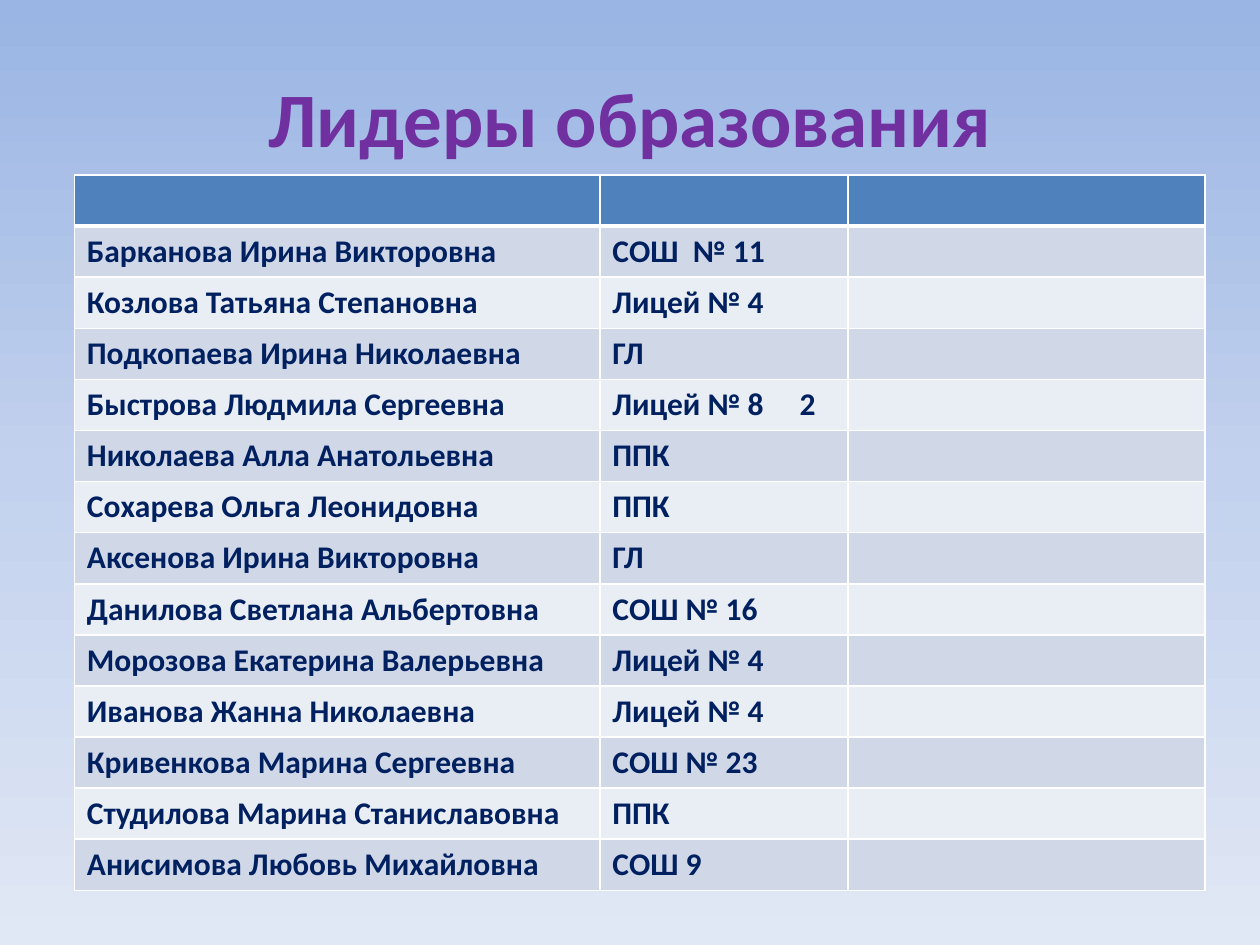
from dataclasses import dataclass
import copy

import lxml.etree
import pptx
import pptx.dml.color
import pptx.enum.text
import pptx.oxml.ns
import pptx.util

Pt = pptx.util.Pt
qn = pptx.oxml.ns.qn


@dataclass(frozen=True)
class Theme:
    font: str = "Calibri"
    title_size: int = 44
    body_size: int = 18
    title: str = "7030A0"
    body: str = "002060"
    header: str = "4F81BD"
    bands: tuple = ("D0D8E8", "E9EDF4")
    border: str = "FFFFFF"
    thin: int = 1
    thick: int = 3
    background: tuple = ("9AB5E4", "C2D1ED", "E1E8F5")


LEADERS = [
    ("Барканова Ирина Викторовна", "СОШ  № 11"),
    ("Козлова Татьяна Степановна", "Лицей № 4"),
    ("Подкопаева Ирина Николаевна", "ГЛ"),
    ("Быстрова Людмила Сергеевна", "Лицей № 8\t2"),
    ("Николаева Алла Анатольевна", "ППК"),
    ("Сохарева Ольга Леонидовна", "ППК"),
    ("Аксенова Ирина Викторовна", "ГЛ"),
    ("Данилова Светлана Альбертовна", "СОШ № 16"),
    ("Морозова Екатерина Валерьевна", "Лицей № 4"),
    ("Иванова Жанна Николаевна", "Лицей № 4"),
    ("Кривенкова Марина Сергеевна", "СОШ № 23"),
    ("Студилова Марина Станиславовна", "ППК"),
    ("Анисимова Любовь Михайловна", "СОШ 9"),
]


def rgb(color):
    return pptx.dml.color.RGBColor.from_string(color)


def write(tf, text, *, font, size, color, bold=True, align=None, tab=None):
    p = tf.paragraphs[0]
    p.alignment = align
    if tab:
        tabs = lxml.etree.SubElement(p._p.get_or_add_pPr(), qn("a:tabLst"))
        lxml.etree.SubElement(tabs, qn("a:tab"), pos=str(Pt(tab)), algn="l")
    r = p.add_run()
    r.text = text
    r.font.name, r.font.size, r.font.bold = font, Pt(size), bold
    r.font.color.rgb = rgb(color)


class SlideBuilder:
    def __init__(self, prs, theme):
        self.theme = theme
        self.s = prs.slides.add_slide(prs.slide_layouts[5])

    def background(self):
        fill = self.s.background.fill
        fill.gradient()
        fill.gradient_angle = 270
        stops = self.s.element.find(".//" + qn("a:gsLst"))
        stops.append(copy.deepcopy(stops[-1]))
        colors = self.theme.background
        for i, (stop, color) in enumerate(zip(fill.gradient_stops, colors)):
            stop.position = i / (len(colors) - 1)
            stop.color.rgb = rgb(color)

    def title(self, text, left, top, width, height):
        sp = self.s.shapes.title
        sp.left, sp.top, sp.width, sp.height = map(Pt, (left, top, width, height))
        tf = sp.text_frame
        tf.vertical_anchor = pptx.enum.text.MSO_ANCHOR.MIDDLE
        write(tf, text, font=self.theme.font, size=self.theme.title_size,
              color=self.theme.title, align=pptx.enum.text.PP_ALIGN.CENTER)

    def borders(self, cell, **widths):
        for side in "LRTB":
            width = widths.get(side, self.theme.thin)
            ln = lxml.etree.SubElement(cell._tc.get_or_add_tcPr(),
                                       qn("a:ln" + side), w=str(Pt(width)))
            fill = lxml.etree.SubElement(ln, qn("a:solidFill"))
            lxml.etree.SubElement(fill, qn("a:srgbClr"), val=self.theme.border)

    def table(self, rows, left, top, col_widths, row_height, tab):
        t = self.theme
        count = len(rows) + 1
        table = self.s.shapes.add_table(
            count, len(col_widths), Pt(left), Pt(top),
            Pt(sum(col_widths)), Pt(row_height * count)).table
        for col, width in zip(table.columns, col_widths):
            col.width = Pt(width)
        for i, row in enumerate(table.rows):
            row.height = Pt(row_height)
            edges = {0: {"B": t.thick}, 1: {"T": t.thick}}.get(i, {})
            for cell in row.cells:
                self.borders(cell, **edges)
                cell.fill.solid()
                cell.fill.fore_color.rgb = rgb(t.bands[(i - 1) % 2] if i else t.header)
        for i, texts in enumerate(rows, 1):
            for j, text in enumerate(texts):
                write(table.cell(i, j).text_frame, text, font=t.font,
                      size=t.body_size, color=t.body,
                      tab=tab if "\t" in text else None)


def main():
    prs = pptx.Presentation()
    prs.slide_width, prs.slide_height = Pt(720), Pt(540)
    slide = SlideBuilder(prs, Theme())
    slide.background()
    slide.title("Лидеры образования", 36, 21.6, 648, 90)
    slide.table(LEADERS, left=42.5, top=100, col_widths=(300.25, 141.75, 204),
                row_height=29.2, tab=107)
    prs.save("out.pptx")


if __name__ == "__main__":
    main()
